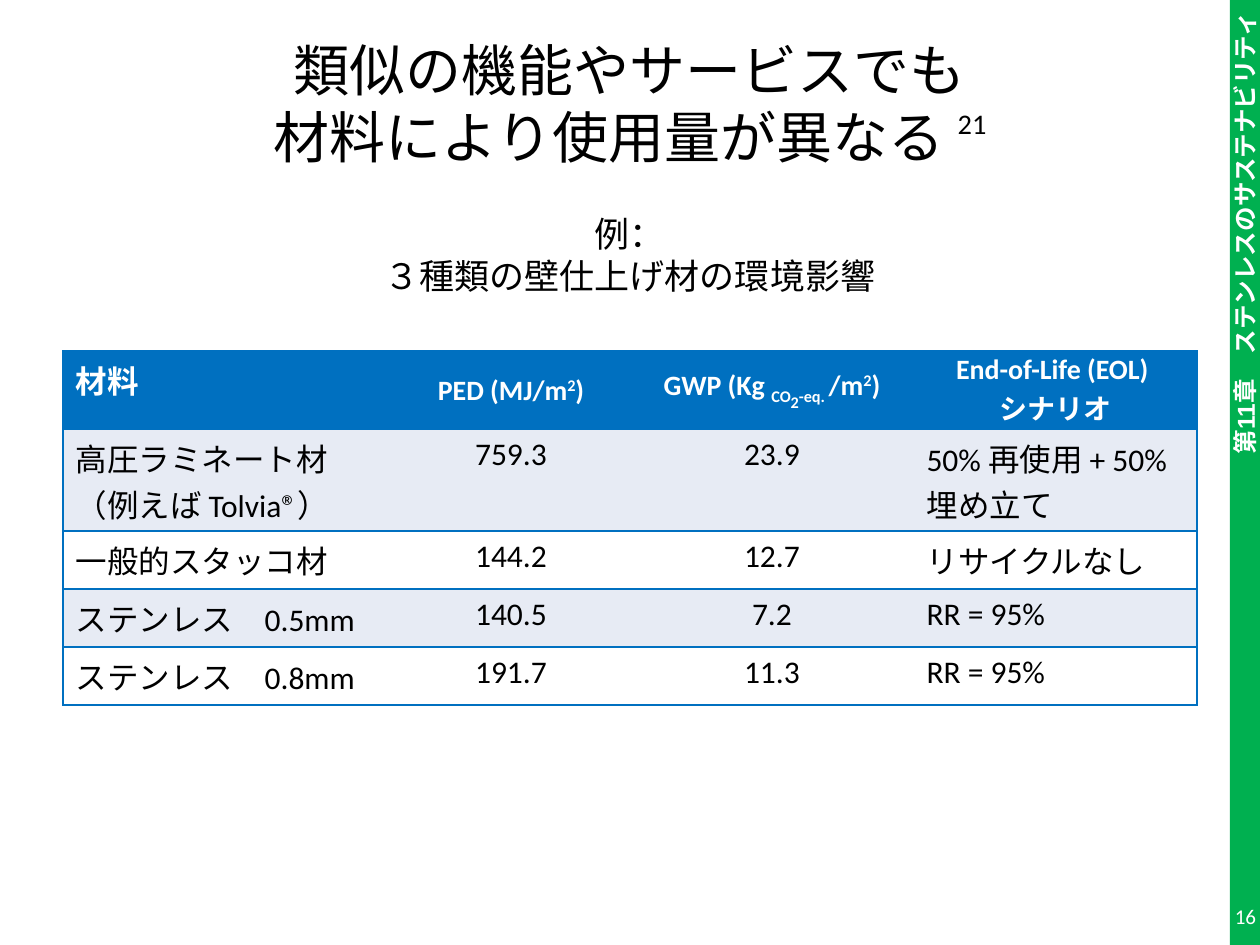
from lxml import etree
from pptx import Presentation
from pptx.dml.color import RGBColor
from pptx.enum.shapes import MSO_SHAPE
from pptx.enum.text import MSO_ANCHOR, PP_ALIGN
from pptx.oxml.ns import qn
from pptx.util import Pt

PX = 914400 / 126
WHITE = RGBColor(255, 255, 255)
BLACK = RGBColor(0, 0, 0)
GREEN = RGBColor(0x00, 0xB0, 0x50)
BLUE = RGBColor(0x00, 0x70, 0xC0)
PALE = RGBColor(0xE7, 0xEB, 0xF4)
LEFT, MID, RIGHT = PP_ALIGN.LEFT, PP_ALIGN.CENTER, PP_ALIGN.RIGHT
TOP, CENTER = MSO_ANCHOR.TOP, MSO_ANCHOR.MIDDLE


def px(*nums):
    return [round(n * PX) for n in nums]


def write(frame, paras, align, size, color, bold=False, name="Calibri"):
    """Fill a text frame; each paragraph is a list of (text, format) runs."""
    frame.word_wrap = True
    for i, runs in enumerate(paras):
        para = frame.add_paragraph() if i else frame.paragraphs[0]
        para.alignment = align
        for text, form in runs:
            run = para.add_run()
            run.text = text
            look = {"size": Pt(form.get("size", size)), "bold": bold, "name": name}
            for key, val in look.items():
                setattr(run.font, key, val)
            run.font.color.rgb = color
            if "base" in form:
                run.font._element.set("baseline", str(form["base"] * 1000))


deck = Presentation()
deck.slide_width, deck.slide_height = px(1260, 945)
slide = deck.slides.add_slide(deck.slide_layouts[6])
shapes = slide.shapes

# Chapter band
band = shapes.add_shape(MSO_SHAPE.RECTANGLE, *px(1230, 0, 30, 945))
band.shadow.inherit = False
band.fill.solid()
band.fill.fore_color.rgb = GREEN
band.line.fill.background()
frame = band.text_frame
frame.vertical_anchor = CENTER
frame._txBody.bodyPr.set("vert", "vert270")
write(frame, [[("第11章　ステンレスのサステナビリティ", {})]], RIGHT, 14, WHITE, True, "Arial")

# Title and example
frame = shapes.add_textbox(*px(63, 38, 1134, 256)).text_frame
frame.vertical_anchor = CENTER
write(frame, [
    [("類似の機能やサービスでも", {})],
    [("材料により使用量が異なる ", {}), ("21", {"size": 28, "base": 50})],
    [("例：", {"size": 20})],
    [("３種類の壁仕上げ材の環境影響", {"size": 20})],
], MID, 32, BLACK)
frame.paragraphs[2].space_before = Pt(24)

# Table of materials
sup, sub, low = {"base": 30}, {"base": -25}, {"base": -46}
heads = [
    [[("材料", {})]],
    [[("PED (MJ/m", {}), ("2", sup), (")", {})]],
    [[("GWP (Kg ", {}), ("CO", sub), ("2", low), ("-eq. ", sub),
      ("/m", {}), ("2", sup), (")", {})]],
    [[("End-of-Life (EOL) ", {})], [("シナリオ", {})]],
]
body = [
    ("高圧ラミネート材\n（例えば Tolvia®）", "759.3", "23.9", "50% 再使用 + 50% 埋め立て"),
    ("一般的スタッコ材", "144.2", "12.7", "リサイクルなし"),
    ("ステンレス　0.5mm", "140.5", "7.2", "RR = 95%"),
    ("ステンレス　0.8mm", "191.7", "11.3", "RR = 95%"),
]
rows = [heads] + [[[[(line, {})] for line in text.split("\n")] for text in row]
                  for row in body]
wides, highs = px(329, 238, 284, 283), px(78, 102, 58, 58, 58)
table = shapes.add_table(5, 4, *px(63, 351, 1134, 354)).table
for col, wide in zip(table.columns, wides):
    col.width = wide
for row, high in zip(table.rows, highs):
    row.height = high

for r, row in enumerate(rows):
    for c, paras in enumerate(row):
        cell = table.cell(r, c)
        props = cell._tc.get_or_add_tcPr()
        edges = {"lnL": c == 0, "lnR": c == 3, "lnT": True, "lnB": True}
        for tag, shown in edges.items():
            edge = etree.SubElement(props, qn("a:" + tag), w=str(Pt(1)))
            fill = etree.SubElement(edge, qn("a:solidFill" if shown else "a:noFill"))
            if shown:
                etree.SubElement(fill, qn("a:srgbClr"), val=str(BLUE))
        cell.fill.solid()
        cell.fill.fore_color.rgb = BLUE if r == 0 else PALE if r % 2 else WHITE
        tight = r == 0 and c > 0
        cell.vertical_anchor = CENTER if tight else TOP
        if tight:
            cell.margin_left, cell.margin_right, cell.margin_top, cell.margin_bottom = px(1, 1, 1, 0)
        align = MID if tight or c in (1, 2) else LEFT
        write(cell.text_frame, paras, align, 16 if tight else 18,
              BLACK if r else WHITE, r == 0)

# Page number
frame = shapes.add_textbox(*px(1202, 891, 54, 50)).text_frame
frame.vertical_anchor = CENTER
for side in ("left", "right", "top", "bottom"):
    setattr(frame, "margin_" + side, 0)
write(frame, [[("16", {})]], RIGHT, 12, WHITE)

deck.save("out.pptx")
